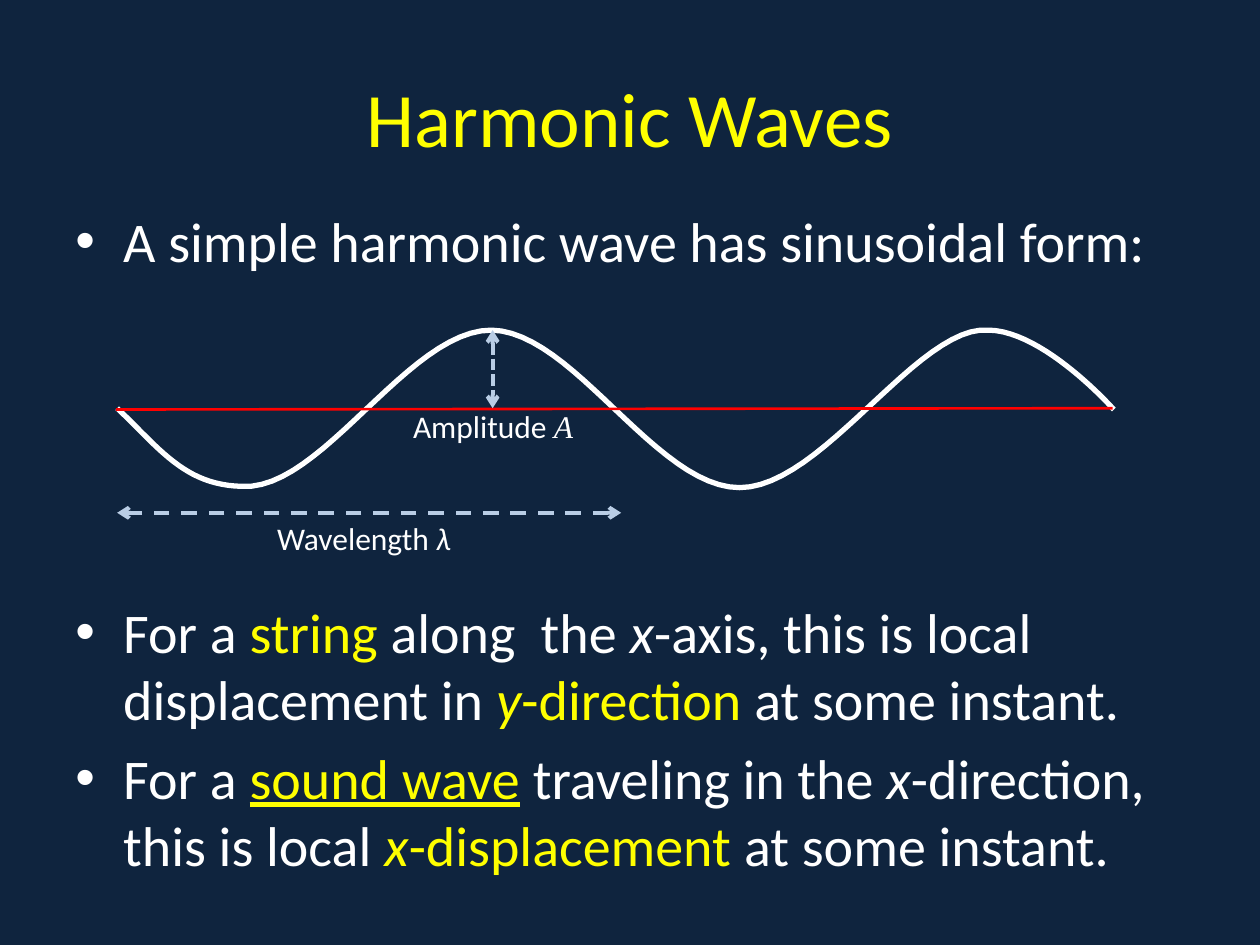
import pptx
import pptx.dml.color
import pptx.enum.dml
import pptx.enum.shapes
import pptx.enum.text
import pptx.oxml
import pptx.oxml.ns
import pptx.util
from pptx.util import Inches

NAVY, WHITE, YELLOW, RED, PALE = "0F243E", "FFFFFF", "FFFF00", "FF0000", "B9CDE5"
DASH = pptx.enum.dml.MSO_LINE
ANCHOR = pptx.enum.text.MSO_ANCHOR

WAVE_START = (0.93, 3.24)
WAVE_CURVES = [
    ((1.26, 3.55), (1.46, 3.85), (1.92, 3.86)),
    ((2.55, 3.9), (3.24, 2.62), (3.9, 2.62)),
    ((4.55, 2.63), (5.21, 3.87), (5.87, 3.87)),
    ((6.53, 3.87), (7.29, 2.57), (7.85, 2.62)),
    ((8.29, 2.63), (8.84, 3.25), (8.84, 3.25)),
]

BULLETS = [
    (6.4, [("A simple harmonic wave has sinusoidal form:", WHITE, "")]),
    (185, [
        ("For a ", WHITE, ""), ("string", YELLOW, ""),
        (" along  the ", WHITE, ""), ("x", WHITE, "i"),
        ("-axis, this is local displacement in ", WHITE, ""),
        ("y", YELLOW, "i"), ("-direction", YELLOW, ""),
        (" at some instant.", WHITE, ""),
    ]),
    (6.4, [
        ("For a ", WHITE, ""), ("sound wave", YELLOW, "u"),
        (" traveling in the ", WHITE, ""), ("x", WHITE, "i"),
        ("-direction, this is local ", WHITE, ""),
        ("x", YELLOW, "i"), ("-displacement", YELLOW, ""),
        (" at some instant.", WHITE, ""),
    ]),
]


def rgb(value):
    return pptx.dml.color.RGBColor.from_string(value)


def add_child(parent, tag, **attrs):
    child = pptx.oxml.parse_xml(f"<{tag} {pptx.oxml.ns.nsdecls('a')}/>")
    for name, value in attrs.items():
        child.set(name, value)
    parent.append(child)


def add_run(p, text, size, color, style="", font="Calibri"):
    r = p.add_run()
    r.text = text
    r.font.name = font
    r.font.size = pptx.util.Pt(size)
    r.font.color.rgb = rgb(color)
    if "i" in style:
        r.font.italic = True
    if "u" in style:
        r.font.underline = True


def add_box(s, left, top, width, height, anchor=ANCHOR.TOP):
    sp = s.shapes.add_textbox(*map(Inches, (left, top, width, height)))
    tf = sp.text_frame
    tf.word_wrap = True
    tf.vertical_anchor = anchor
    return tf


def add_title(s, text):
    p = add_box(s, 0.5, 0.3, 9, 1.25, ANCHOR.MIDDLE).paragraphs[0]
    p.alignment = pptx.enum.text.PP_ALIGN.CENTER
    add_run(p, text, 44, YELLOW)


def add_bullets(s, bullets):
    tf = add_box(s, 0.5, 1.59, 9, 5.58)
    for i, (space, runs) in enumerate(bullets):
        p = tf.add_paragraph() if i else tf.paragraphs[0]
        p.space_before = pptx.util.Pt(space)
        pPr = p._p.get_or_add_pPr()
        pPr.set("marL", str(Inches(0.38)))
        pPr.set("indent", str(-Inches(0.38)))
        add_child(pPr, "a:buFont", typeface="Arial")
        add_child(pPr, "a:buChar", char="•")
        for text, color, style in runs:
            add_run(p, text, 32, color, style)


def add_label(s, left, top, width, text, symbol, symbol_font):
    p = add_box(s, left, top, width, 0.4).paragraphs[0]
    add_run(p, text, 18, WHITE)
    add_run(p, symbol, 18, WHITE, "i", symbol_font)


def curve_points(start, curves, steps=24):
    points = [start]
    for c1, c2, end in curves:
        corners = (points[-1], c1, c2, end)
        for k in range(1, steps + 1):
            t = k / steps
            u = 1 - t
            weights = (u**3, 3 * u * u * t, 3 * u * t * t, t**3)
            points.append(tuple(
                sum(w * c[axis] for w, c in zip(weights, corners))
                for axis in (0, 1)
            ))
    return points


def add_wave(s):
    points = [(Inches(x), Inches(y)) for x, y in curve_points(WAVE_START, WAVE_CURVES)]
    builder = s.shapes.build_freeform(*points[0])
    builder.add_line_segments(points[1:], close=False)
    sp = builder.convert_to_shape()
    sp.shadow.inherit = False
    sp.fill.background()
    sp.line.color.rgb = rgb(WHITE)
    sp.line.width = pptx.util.Pt(3)


def add_line(s, start, end, color, width, dash=None):
    cx = s.shapes.add_connector(
        pptx.enum.shapes.MSO_CONNECTOR.STRAIGHT, *map(Inches, start + end))
    cx.line.color.rgb = rgb(color)
    cx.line.width = pptx.util.Pt(width)
    if dash:
        cx.line.dash_style = dash
        ln = cx.line._get_or_add_ln()
        add_child(ln, "a:headEnd", type="arrow")
        add_child(ln, "a:tailEnd", type="arrow")
    add_child(cx._element.spPr, "a:effectLst")


def main():
    prs = pptx.Presentation()
    prs.slide_width, prs.slide_height = Inches(10), Inches(7.5)
    s = prs.slides.add_slide(prs.slide_layouts[6])
    s.background.fill.solid()
    s.background.fill.fore_color.rgb = rgb(NAVY)
    add_title(s, "Harmonic Waves")
    add_bullets(s, BULLETS)
    add_wave(s)
    add_line(s, (0.92, 3.25), (8.83, 3.24), RED, 1.5)
    add_line(s, (3.91, 2.62), (3.91, 3.24), PALE, 2.25, DASH.SQUARE_DOT)
    add_line(s, (4.93, 4.07), (0.93, 4.07), PALE, 2.25, DASH.DASH)
    add_label(s, 3.18, 3.18, 2, "Amplitude ", "A", "Times New Roman")
    add_label(s, 2.1, 4.07, 1.75, "Wavelength ", "λ", "Calibri")
    prs.save("out.pptx")


if __name__ == "__main__":
    main()
